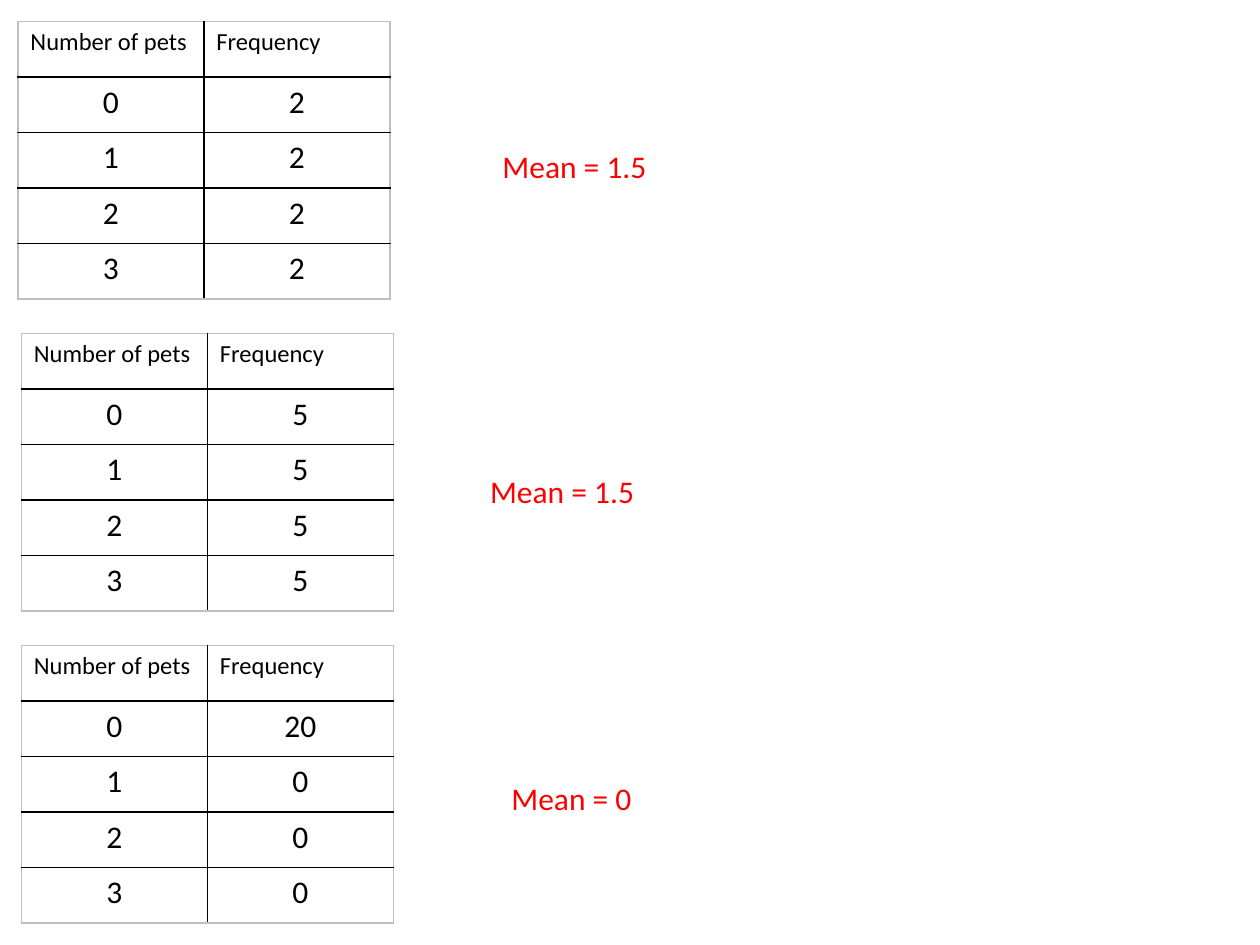
from dataclasses import dataclass

from lxml import etree
from pptx import Presentation
from pptx.dml.color import RGBColor
from pptx.enum.text import MSO_AUTO_SIZE, PP_ALIGN
from pptx.oxml.ns import qn
from pptx.slide import Slide
from pptx.table import _Cell
from pptx.util import Cm, Pt

CENTER, LEFT = PP_ALIGN.CENTER, PP_ALIGN.LEFT
FIT_SHAPE = MSO_AUTO_SIZE.SHAPE_TO_FIT_TEXT


@dataclass(frozen=True)
class Theme:
    font: str = "Calibri"
    header_size: int = 14
    body_size: int = 18
    text: str = "000000"
    answer: str = "FF0000"
    inner_line: str = "000000"
    outer_line: str = "BFBFBF"
    line_width: int = 1


@dataclass(frozen=True)
class PetSurvey:
    left: float  # all lengths in cm
    frequencies: tuple[int, ...]
    mean: str
    mean_left: float
    mean_top: float


THEME = Theme()
HEADERS = ("Number of pets", "Frequency")
FIRST_TOP, TABLE_PITCH = 0.43, 6.29
COLUMN_WIDTH, ROW_HEIGHT = 3.75, 1.12
MEAN_WIDTH, MEAN_HEIGHT = 7.34, 1.03

SURVEYS = (
    PetSurvey(0.36, (2, 2, 2, 2), "Mean = 1.5", 9.88, 2.84),
    PetSurvey(0.43, (5, 5, 5, 5), "Mean = 1.5", 9.63, 9.4),
    PetSurvey(0.43, (20, 0, 0, 0), "Mean = 0", 10.06, 15.57),
)


def write(frame, text: str, size: int, color: str, align=LEFT) -> None:
    paragraph = frame.paragraphs[0]
    paragraph.text = text
    paragraph.alignment = align
    paragraph.font.name = THEME.font
    paragraph.font.size = Pt(size)
    paragraph.font.color.rgb = RGBColor.from_string(color)


def set_borders(cell: _Cell, outer_sides: dict[str, bool]) -> None:
    properties = cell._tc.get_or_add_tcPr()
    for side, is_outer in outer_sides.items():
        line = etree.SubElement(properties, qn(f"a:ln{side}"), w=str(Pt(THEME.line_width)))
        fill = etree.SubElement(line, qn("a:solidFill"))
        color = THEME.outer_line if is_outer else THEME.inner_line
        etree.SubElement(fill, qn("a:srgbClr"), val=color)


def add_frequency_table(slide: Slide, survey: PetSurvey, top: float) -> None:
    rows = [HEADERS, *((str(pets), str(count)) for pets, count in enumerate(survey.frequencies))]
    last_row, last_column = len(rows) - 1, len(HEADERS) - 1
    table = slide.shapes.add_table(
        len(rows), len(HEADERS), Cm(survey.left), Cm(top),
        Cm(COLUMN_WIDTH * len(HEADERS)), Cm(ROW_HEIGHT * len(rows)),
    ).table
    table.first_row = table.horz_banding = False
    for column in table.columns:
        column.width = Cm(COLUMN_WIDTH)
    for r, values in enumerate(rows):
        table.rows[r].height = Cm(ROW_HEIGHT)
        size, align = (THEME.body_size, CENTER) if r else (THEME.header_size, LEFT)
        for c, value in enumerate(values):
            cell = table.cell(r, c)
            write(cell.text_frame, value, size, THEME.text, align)
            set_borders(cell, {"L": c == 0, "R": c == last_column, "T": r == 0, "B": r == last_row})
            cell.fill.background()


def add_mean(slide: Slide, survey: PetSurvey) -> None:
    frame = slide.shapes.add_textbox(
        Cm(survey.mean_left), Cm(survey.mean_top), Cm(MEAN_WIDTH), Cm(MEAN_HEIGHT)
    ).text_frame
    frame.word_wrap = True
    frame.auto_size = FIT_SHAPE
    write(frame, survey.mean, THEME.body_size, THEME.answer)


def main() -> None:
    presentation = Presentation()
    presentation.slide_width, presentation.slide_height = Cm(25.4), Cm(19.05)
    slide = presentation.slides.add_slide(presentation.slide_layouts[6])

    # Frequency tables down the left side
    for index, survey in enumerate(SURVEYS):
        add_frequency_table(slide, survey, FIRST_TOP + index * TABLE_PITCH)

    # Mean beside each table
    for survey in SURVEYS:
        add_mean(slide, survey)

    presentation.save("out.pptx")


if __name__ == "__main__":
    main()
